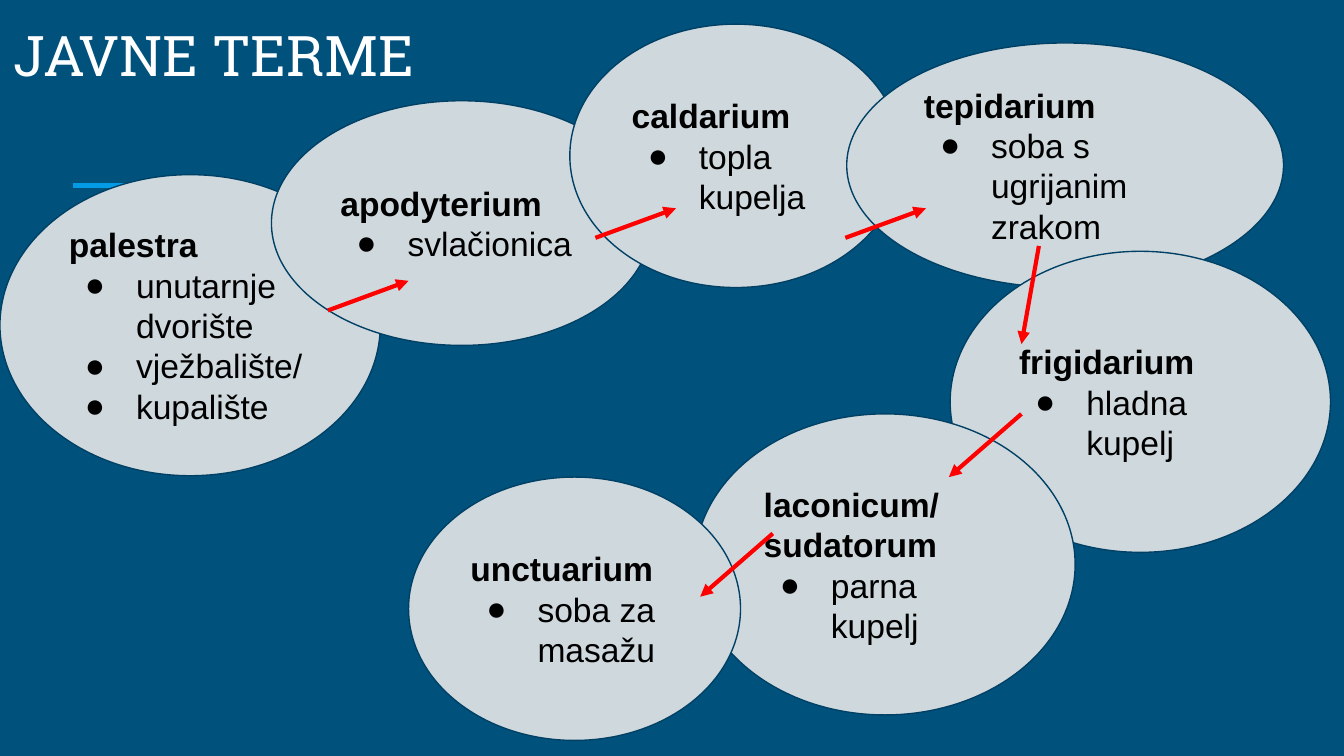
from dataclasses import dataclass

from lxml import etree
from pptx import Presentation
from pptx.dml.color import RGBColor
from pptx.enum.shapes import MSO_CONNECTOR, MSO_SHAPE
from pptx.enum.text import MSO_ANCHOR, MSO_AUTO_SIZE, PP_ALIGN
from pptx.oxml.ns import qn
from pptx.util import Inches, Pt

ELLIPSE = MSO_SHAPE.OVAL
STRAIGHT = MSO_CONNECTOR.STRAIGHT
LEFT = PP_ALIGN.LEFT
MIDDLE, BOTTOM = MSO_ANCHOR.MIDDLE, MSO_ANCHOR.BOTTOM
NO_AUTOFIT = MSO_AUTO_SIZE.NONE
TITLE_ONLY = 5

SLIDE_WIDTH, SLIDE_HEIGHT = Inches(10), Inches(5.625)
COLUMNS, ROWS = 100, 56.25


@dataclass(frozen=True)
class Theme:
    background: str = "00517C"
    accent: str = "039BE5"
    title: str = "FFFFFF"
    room: str = "CFD8DC"
    outline: str = "004065"
    text: str = "000000"
    route: str = "FF0000"
    title_font: str = "Roboto Slab"
    body_font: str = "Arial"
    title_size: float = 30
    body_size: float = 18
    accent_width: float = 3
    outline_width: float = 0.75
    route_width: float = 2.25
    inset: float = 1
    bullet_indent: float = 5
    bullet_hang: float = 3.8


THEME = Theme()

ROOMS = [
    ((0, 13, 28.3, 22.4), ["palestra"], ["unutarnje dvorište", "vježbalište/", "kupalište"]),
    ((20.2, 7.5, 28.3, 18.2), ["apodyterium"], ["svlačionica"]),
    ((42.4, 1.8, 24.7, 19.6), ["caldarium"], ["topla kupelja"]),
    ((63, 3.2, 32.5, 18.2), ["tepidarium"], ["soba s ugrijanim zrakom"]),
    ((70.7, 18.7, 28.3, 22.4), ["frigidarium"], ["hladna kupelj"]),
    ((51.7, 30.8, 28.3, 22.4), ["laconicum/", "sudatorum"], ["parna kupelj"]),
    ((30.4, 35.5, 24.7, 19.6), ["unctuarium"], ["soba za masažu"]),
]

RISE, DROP, RETURN = (6, -2.2), (-1.3, 7.3), (-5.4, 4.7)
ROUTE = [
    ((24.4, 23.1), RISE),
    ((44.3, 17.7), RISE),
    ((62.9, 17.7), RISE),
    ((77.3, 18.3), DROP),
    ((76, 30.8), RETURN),
    ((57.5, 39.7), RETURN),
]


def col(count):
    return round(SLIDE_WIDTH * count / COLUMNS)


def row(count):
    return round(SLIDE_HEIGHT * count / ROWS)


def place(box):
    left, top, width, height = box
    return col(left), row(top), col(width), row(height)


def color(value):
    return RGBColor.from_string(value)


def write(paragraph, text, *, font, size, ink, bold=False):
    paragraph.alignment = LEFT
    run = paragraph.add_run()
    run.text = text
    run.font.name = font
    run.font.size = Pt(size)
    run.font.bold = bold
    run.font.color.rgb = color(ink)


def prepare_frame(frame, anchor):
    frame.word_wrap = True
    frame.auto_size = NO_AUTOFIT
    frame.vertical_anchor = anchor
    frame.margin_left = frame.margin_right = col(THEME.inset)
    frame.margin_top = frame.margin_bottom = row(THEME.inset)


def add_bullet(paragraph):
    properties = paragraph._p.get_or_add_pPr()
    properties.set("marL", str(col(THEME.bullet_indent)))
    properties.set("indent", str(-col(THEME.bullet_hang)))
    ink = etree.SubElement(properties, qn("a:buClr"))
    etree.SubElement(ink, qn("a:srgbClr"), val=THEME.text)
    etree.SubElement(properties, qn("a:buFont"), typeface=THEME.body_font)
    etree.SubElement(properties, qn("a:buChar"), char="●")


def add_line(slide, start, reach, ink, width, arrow=False):
    (x, y), (across, down) = start, reach
    line = slide.shapes.add_connector(
        STRAIGHT, col(x), row(y), col(x + across), row(y + down))
    line.line.color.rgb = color(ink)
    line.line.width = Pt(width)
    if arrow:
        etree.SubElement(line.line._get_or_add_ln(), qn("a:tailEnd"), type="triangle")
    etree.SubElement(line._element.spPr, qn("a:effectLst"))


def add_title(slide, box, text):
    title = slide.shapes.title
    title.left, title.top, title.width, title.height = place(box)
    prepare_frame(title.text_frame, BOTTOM)
    write(title.text_frame.paragraphs[0], text, font=THEME.title_font,
          size=THEME.title_size, ink=THEME.title)


def add_room(slide, box, names, features):
    room = slide.shapes.add_shape(ELLIPSE, *place(box))
    room.shadow.inherit = False
    room.fill.solid()
    room.fill.fore_color.rgb = color(THEME.room)
    room.line.color.rgb = color(THEME.outline)
    room.line.width = Pt(THEME.outline_width)
    frame = room.text_frame
    prepare_frame(frame, MIDDLE)
    for index, text in enumerate(names + features):
        paragraph = frame.paragraphs[0] if index == 0 else frame.add_paragraph()
        is_name = index < len(names)
        write(paragraph, text, font=THEME.body_font, size=THEME.body_size,
              ink=THEME.text, bold=is_name)
        if not is_name:
            add_bullet(paragraph)


def add_route(slide, steps):
    for start, reach in steps:
        add_line(slide, start, reach, THEME.route, THEME.route_width, arrow=True)


def main():
    deck = Presentation()
    deck.slide_width, deck.slide_height = SLIDE_WIDTH, SLIDE_HEIGHT
    slide = deck.slides.add_slide(deck.slide_layouts[TITLE_ONLY])
    slide.background.fill.solid()
    slide.background.fill.fore_color.rgb = color(THEME.background)
    add_line(slide, (5.4, 13.8), (4.6, 0), THEME.accent, THEME.accent_width)
    add_title(slide, (0, 0, 91.5, 7.5), "JAVNE TERME")
    for box, names, features in ROOMS:
        add_room(slide, box, names, features)
    add_route(slide, ROUTE)
    deck.save("out.pptx")


if __name__ == "__main__":
    main()
